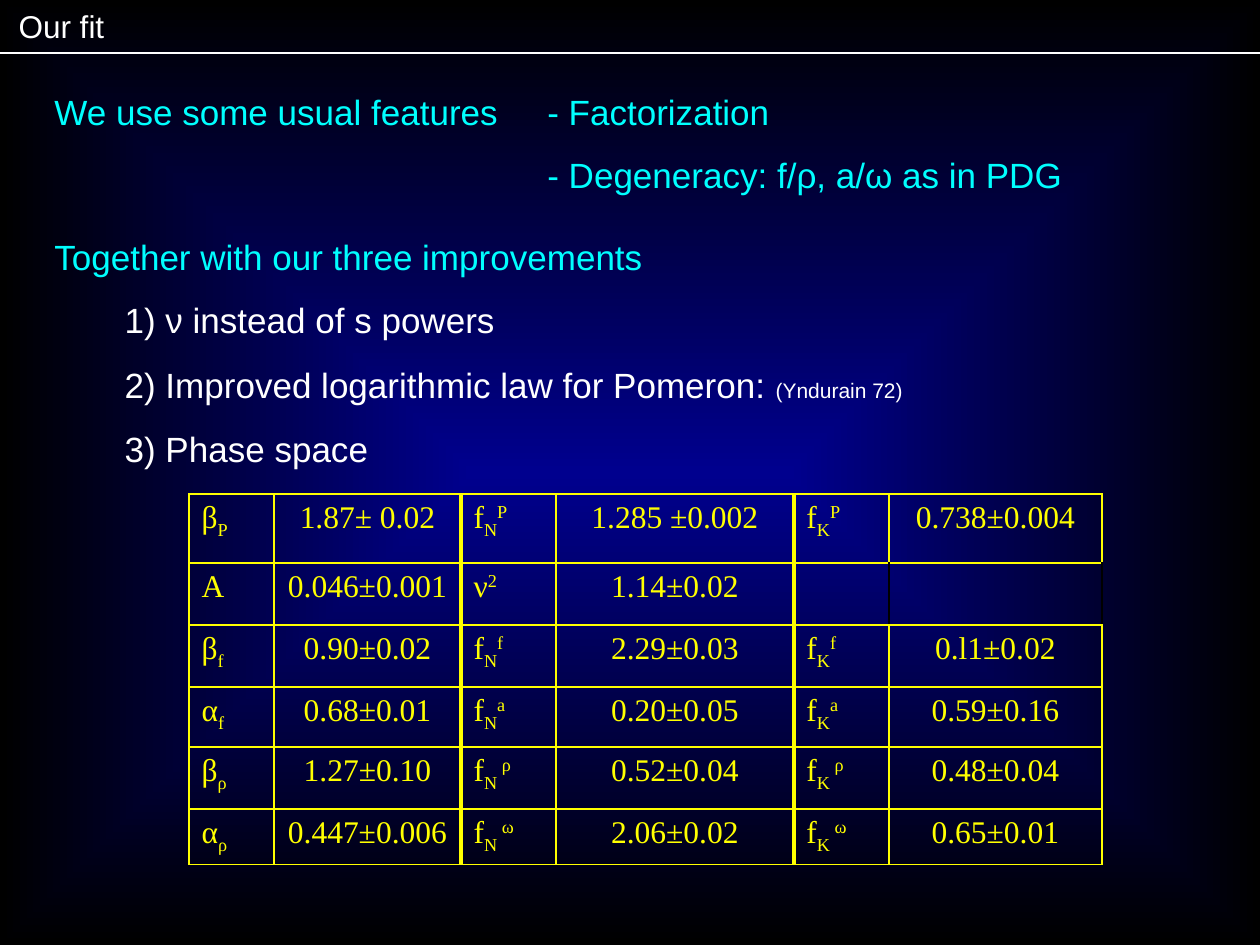
from lxml.etree import SubElement
from pptx import Presentation
from pptx.dml.color import RGBColor
from pptx.enum.shapes import MSO_CONNECTOR as CONN
from pptx.enum.text import MSO_ANCHOR as ANCHOR, MSO_AUTO_SIZE as AUTO, PP_ALIGN as ALIGN
from pptx.oxml import parse_xml
from pptx.oxml.ns import nsdecls, qn
from pptx.util import Pt

PX = 7257
CYAN, WHITE, YELLOW, BLACK = "00FFFF", "FFFFFF", "FFFF00", "000000"


def rgb(value):
    return RGBColor.from_string(value)


def write(p, text, size=20, color=WHITE, font="Arial", align=ALIGN.LEFT, before=0, base=0):
    p.alignment = align
    p.space_before = Pt(before)
    r = p.add_run()
    r.text = text
    r.font.size = Pt(size)
    r.font.name = font
    r.font.color.rgb = rgb(color)
    if base:
        r.font._element.set("baseline", str(base * 1000))


prs = Presentation()
prs.slide_width, prs.slide_height = 1260 * PX, 945 * PX
s = prs.slides.add_slide(prs.slide_layouts[1])

fill = s.background.fill
fill.gradient()
for stop, color in zip(fill.gradient_stops, ("00008E", BLACK)):
    stop.color.rgb = rgb(color)
grad = s._element.find(".//" + qn("a:gradFill"))
grad.remove(grad.find(qn("a:lin")))
grad.append(parse_xml(
    f'<a:path {nsdecls("a")} path="shape">'
    '<a:fillToRect l="50000" t="50000" r="50000" b="50000"/></a:path>'))

title = s.shapes.title
title.left, title.top, title.width, title.height = 6 * PX, 1 * PX, 112 * PX, 50 * PX
tf = title.text_frame
tf.word_wrap = False
tf.auto_size = AUTO.NONE
tf.vertical_anchor = ANCHOR.MIDDLE
write(tf.paragraphs[0], "Our fit", size=18)

rule = s.shapes.add_connector(CONN.STRAIGHT, 0, 53 * PX, 1260 * PX, 53 * PX)
rule.line.color.rgb = rgb(WHITE)
rule.line.width = Pt(0.75)
SubElement(rule._element.spPr, qn("a:effectLst"))

statements = [
    (42, 84, 471, "We use some usual features"),
    (535, 84, 630, "- Factorization"),
    (535, 147, 630, "- Degeneracy: f/ρ, a/ω as in PDG"),
    (42, 229, 617, "Together with our three improvements"),
]
for x, y, w, text in statements:
    tf = s.shapes.add_textbox(x * PX, y * PX, w * PX, 55 * PX).text_frame
    tf.word_wrap = True
    write(tf.paragraphs[0], text, color=CYAN)

body = s.placeholders[1]
body.left, body.top, body.width, body.height = 112 * PX, 292 * PX, 808 * PX, 181 * PX
tf = body.text_frame
tf.auto_size = AUTO.NONE
improvements = [
    "1) ν instead of s powers",
    "2) Improved logarithmic law for Pomeron: ",
    "3) Phase space",
]
for i, text in enumerate(improvements):
    p = tf.add_paragraph() if i else tf.paragraphs[0]
    write(p, text, before=13 if i else 0)
    pPr = p._p.get_or_add_pPr()
    pPr.set("marL", "0")
    pPr.set("indent", "0")
    SubElement(pPr, qn("a:buNone"))
write(tf.paragraphs[1], "(Yndurain 72)", size=12, before=13)

rows = [
    ("β|P", "1.87± 0.02", "f|N|P", "1.285 ±0.002", "f|K|P", "0.738±0.004"),
    ("A", "0.046±0.001", "ν||2", "1.14±0.02", "", ""),
    ("β|f", "0.90±0.02", "f|N|f", "2.29±0.03", "f|K|f", "0.l1±0.02"),
    ("α|f", "0.68±0.01", "f|N|a", "0.20±0.05", "f|K|a", "0.59±0.16"),
    ("β|ρ", "1.27±0.10", "f|N |ρ", "0.52±0.04", "f|K |ρ", "0.48±0.04"),
    ("α|ρ", "0.447±0.006", "f|N |ω", "2.06±0.02", "f|K |ω", "0.65±0.01"),
]
widths = [85, 187, 95, 238, 95, 213]
heights = [69, 62, 62, 60, 62, 55]
table = s.shapes.add_table(6, 6, 189 * PX, 494 * PX, sum(widths) * PX, sum(heights) * PX).table
table.first_row = table.horz_banding = False
for col, w in zip(table.columns, widths):
    col.width = w * PX
for row, h in zip(table.rows, heights):
    row.height = h * PX

for i, row in enumerate(rows):
    for j, text in enumerate(row):
        cell = table.cell(i, j)
        cell.fill.background()
        p = cell.text_frame.paragraphs[0]
        for part, base in zip(text.split("|"), (0, -25, 30)):
            if part:
                write(p, part, size=18, color=YELLOW, font="Times New Roman",
                      align=ALIGN.CENTER if j % 2 else ALIGN.LEFT, base=base)
        tcPr = cell._tc.get_or_add_tcPr()
        for k, side in enumerate("LRTB"):
            thick = (side == "L" and j in (2, 4)) or (side == "R" and j in (1, 3))
            dark = i == 1 and (side == "R" and j >= 4 or side == "L" and j == 5)
            tcPr.insert(k, parse_xml(
                f'<a:ln{side} {nsdecls("a")} w="{Pt(2.25 if thick else 1)}"><a:solidFill>'
                f'<a:srgbClr val="{BLACK if dark else YELLOW}"/></a:solidFill></a:ln{side}>'))

prs.save("out.pptx")
